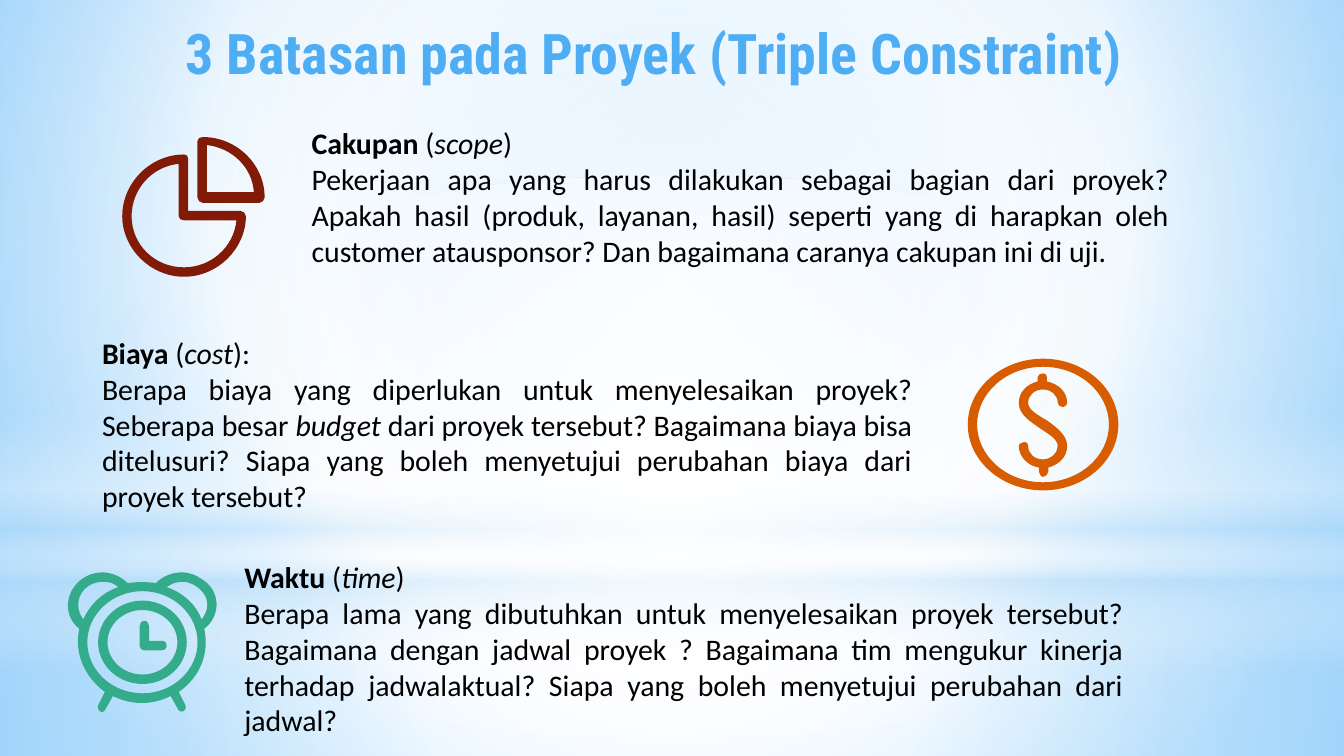
from lxml.etree import SubElement
from pptx import Presentation
from pptx.dml.color import RGBColor
from pptx.enum.shapes import MSO_SHAPE
from pptx.enum.text import MSO_ANCHOR, MSO_AUTO_SIZE, PP_ALIGN
from pptx.oxml.ns import qn
from pptx.util import Cm, Pt

SKY, WHITE, AZURE = RGBColor(0x9E, 0xD5, 0xFF), RGBColor(255, 255, 255), RGBColor(0x5B, 0xB9, 0xFF)
MIST = RGBColor(0xB4, 0xDC, 0xFA)
TITLE_BLUE, BLACK = RGBColor(0x4F, 0xAD, 0xF3), RGBColor(0, 0, 0)
MAROON, ORANGE, GREEN = RGBColor(0x82, 0x1A, 0x08), RGBColor(0xD8, 0x5C, 0x00), RGBColor(0x34, 0xAC, 0x8B)

CENTRE = (50, 50, 50, 50)
ARGUMENTS = {"M": 2, "L": 2, "C": 6, "O": 4, "Z": 0}
ROUNDNESS = 0.55

PIE = (
    "M 42 20 L 42 59 C 42 61 44 62 46 62 L 85 62 C 83 82 66 97 46 97 C 24 97 7 80 7 59 "
    "C 7 39 22 22 42 20 Z M 46 13 C 21 13 0 34 0 59 C 0 83 21 104 46 104 C 71 104 92 83 92 59 "
    "C 92 57 90 55 88 55 L 49 55 L 49 16 C 49 14 48 13 46 13 Z",
    "M 63 6 C 82 8 97 23 98 41 L 63 41 Z M 60 0 C 58 0 56 1 56 3 L 56 45 C 56 47 58 49 60 49 "
    "L 102 49 C 104 49 106 47 106 45 C 106 20 85 0 60 0 Z",
)
COIN = (
    "M 56 11 C 54 11 52 12 52 14 L 52 17 C 44 19 38 25 38 33 C 38 42 47 47 54 52 "
    "C 60 56 67 60 67 65 C 67 70 62 75 56 75 C 50 75 45 71 45 65 C 45 63 44 62 42 62 "
    "C 40 62 38 64 38 65 C 38 73 45 80 53 81 L 53 84 C 53 86 55 88 56 88 C 58 88 60 86 60 84 "
    "L 60 81 C 68 79 74 73 74 65 C 74 57 66 51 59 46 C 52 42 45 38 45 33 C 45 27 50 23 56 23 "
    "C 62 23 67 27 67 33 C 67 35 69 36 71 36 C 73 36 74 34 74 33 C 74 25 68 19 59 17 "
    "L 59 14 C 59 12 58 11 56 11 Z",
    "O 56 49 49 43 O 56 49 56 49",
)
CLOCK = (
    "O 58 52 26 24 O 58 52 33 31",
    "M 29 7 C 33 7 37 8 40 11 C 28 15 19 24 14 35 C 8 27 9 16 18 10 C 21 8 25 7 29 7 Z "
    "M 88 7 C 93 7 99 10 103 15 C 108 21 107 29 102 35 C 98 24 88 15 76 11 C 80 8 84 7 88 7 Z "
    "O 58 52 41 38 "
    "M 28 0 C 20 0 12 4 7 11 C 0 21 1 34 11 42 C 7 60 15 78 30 89 L 25 99 C 24 101 26 104 28 104 "
    "C 29 104 30 103 31 101 L 36 92 C 50 99 65 99 79 92 L 84 101 C 85 104 88 104 89 103 "
    "C 90 102 91 100 90 99 L 85 89 C 101 78 108 60 104 42 C 117 32 116 13 102 5 "
    "C 98 2 93 0 87 0 C 80 0 73 3 68 8 C 61 7 54 7 47 8 C 42 3 35 0 28 0 Z",
    "M 60 36 C 57 36 56 38 56 40 L 56 55 C 56 56 57 58 60 58 L 72 58 C 75 58 76 56 76 55 "
    "C 76 52 75 51 72 51 L 63 51 L 63 40 C 63 38 61 36 60 36 Z",
)
GRID_UNIT = Cm(0.0254)

CONSTRAINTS = [
    ((5.64, 2.24, 16.71, 3.68), (-3.33, 0.35), PIE, MAROON, ("Cakupan ", "scope", ")"), [
        ("Pekerjaan apa yang harus dilakukan sebagai bagian dari proyek? Apakah hasil (produk, "
         "layanan, hasil) seperti yang di harapkan oleh customer atausponsor? Dan bagaimana "
         "caranya cakupan ini di uji.", False, False)]),
    ((4.37, 10.44, 17.12, 3.68), (-3.15, 0.38), CLOCK, GREEN, ("Waktu ", "time", ")"), [
        ("Berapa lama yang dibutuhkan untuk menyelesaikan proyek tersebut? Bagaimana dengan "
         "jadwal proyek ? Bagaimana tim mengukur kinerja terhadap jadwalaktual? Siapa yang boleh "
         "menyetujui perubahan dari jadwal?", False, False)]),
    ((1.68, 6.2, 15.82, 3.68), (16.61, 0.58), COIN, ORANGE, ("Biaya ", "cost", "):"), [
        ("Berapa biaya yang diperlukan untuk menyelesaikan proyek? Seberapa besar ", False, False),
        ("budget ", False, True),
        ("dari proyek tersebut? Bagaimana biaya bisa ditelusuri? Siapa yang boleh menyetujui "
         "perubahan biaya dari proyek tersebut?", False, False)]),
]


def set_gradient(fill, holder, stops, focus=None):
    """Fill with (position, colour, opacity) stops, circular around focus or else downwards."""
    fill.solid()
    solid = holder.find(qn("a:solidFill"))
    gradient = solid.makeelement(qn("a:gradFill"), {"rotWithShape": "1"})
    stop_list = SubElement(gradient, qn("a:gsLst"))
    for position, colour, opacity in stops:
        stop = SubElement(stop_list, qn("a:gs"), pos=str(position * 1000))
        tint = SubElement(stop, qn("a:srgbClr"), val=str(colour))
        if opacity < 100:
            SubElement(tint, qn("a:alpha"), val=str(opacity * 1000))
    if focus:
        circle = SubElement(gradient, qn("a:path"), path="circle")
        SubElement(circle, qn("a:fillToRect"), {side: str(share * 1000) for side, share in zip("ltrb", focus)})
    else:
        SubElement(gradient, qn("a:lin"), ang="5400000", scaled="0")
    holder.replace(solid, gradient)


def add_backdrop(slide, width):
    """Paint the background and its translucent bands of light across the width."""
    set_gradient(slide.background.fill, slide.element.cSld.bg.bgPr,
                 [(0, SKY, 100), (60, WHITE, 100), (100, AZURE, 100)], (20, 10, 20, 60))
    bands = [
        (MSO_SHAPE.RECTANGLE, 10.64, 3.65, [(0, WHITE, 91), (37, WHITE, 76), (100, MIST, 79)], CENTRE),
        (MSO_SHAPE.RECTANGLE, 0, 10.64, [(0, WHITE, 89), (48, WHITE, 62), (100, MIST, 79)], CENTRE),
        (MSO_SHAPE.RECTANGLE, 7.85, 4.78, [(0, WHITE, 0), (29, WHITE, 30), (45, MIST, 40),
                                           (55, WHITE, 26), (65, MIST, 60), (100, WHITE, 0)], None),
        (MSO_SHAPE.OVAL, 3.33, 10.64, [(0, WHITE, 100), (56, WHITE, 0)], CENTRE),
    ]
    for preset, top, height, stops, focus in bands:
        band = slide.shapes.add_shape(preset, 0, Cm(top), width, Cm(height))
        band.shadow.inherit = False
        band.line.fill.background()
        set_gradient(band.fill, band.element.spPr, stops, focus)


def add_title(slide, box):
    """Place the title placeholder in the box, in front of the backdrop."""
    title = slide.shapes.title
    slide.shapes.element.append(title.element)
    title.left, title.top, title.width, title.height = map(Cm, box)
    frame = title.text_frame
    frame.text = "3 Batasan pada Proyek (Triple Constraint)"
    frame.auto_size = MSO_AUTO_SIZE.NONE
    frame.vertical_anchor = MSO_ANCHOR.MIDDLE
    frame.paragraphs[0].alignment = PP_ALIGN.CENTER
    font = frame.paragraphs[0].runs[0].font
    font.name, font.size, font.bold = "Roboto Condensed", Pt(30), True
    font.color.rgb = TITLE_BLUE


def trace(outline):
    """Return the contours of an M, L, C, O and Z outline and where its curves start."""
    tokens = iter(outline.split())
    contours, curve_starts, segments = [], [], 0
    for command in tokens:
        values = [int(next(tokens)) for _ in range(ARGUMENTS[command])]
        points = list(zip(values[::2], values[1::2]))
        if command == "O":
            x, y, rx, ry = values
            contours.append([(x + rx, y)])
            points = [(x + rx * across, y + ry * down)
                      for a, b in ((1, 0), (0, 1), (-1, 0), (0, -1))
                      for across, down in ((a - ROUNDNESS * b, b + ROUNDNESS * a),
                                           (ROUNDNESS * a - b, ROUNDNESS * b + a), (-b, a))]
        if command == "M":
            contours.append(points)
            continue
        if command in "CO":
            curve_starts += range(segments, segments + len(points), 3)
        if points:
            contours[-1] += points
            segments += len(points)
    return contours, curve_starts


def add_icon(slide, left, top, outlines, colour):
    """Draw the outlines of one icon from its top left corner and group them."""
    parts = []
    for outline in outlines:
        contours, curve_starts = trace(outline)
        scaled = [[(x * GRID_UNIT, y * GRID_UNIT) for x, y in contour] for contour in contours]
        builder = slide.shapes.build_freeform(*scaled[0][0])
        for index, (start, *others) in enumerate(scaled):
            if index:
                builder.move_to(*start)
            builder.add_line_segments(others, close=True)
        part = builder.convert_to_shape(left, top)
        segments = list(part.element.iter(qn("a:lnTo")))
        for start in curve_starts:
            curve = segments[start]
            curve.tag = qn("a:cubicBezTo")
            for extra in segments[start + 1:start + 3]:
                curve.append(extra[0])
                extra.getparent().remove(extra)
        part.shadow.inherit = False
        part.fill.solid()
        part.fill.fore_color.rgb = colour
        part.line.fill.background()
        parts.append(part)
    slide.shapes.add_group_shape(parts)


def add_constraint(slide, box, icon_offset, icon, colour, heading, details):
    """Place one constraint's text in the box and its icon at an offset from it."""
    left, top, width, height = map(Cm, box)
    frame = slide.shapes.add_textbox(left, top, width, height).text_frame
    frame.word_wrap = True
    frame.auto_size = MSO_AUTO_SIZE.SHAPE_TO_FIT_TEXT
    name, term, ending = heading
    heading_runs = [(name, True, False), ("(", False, False), (term, False, True), (ending, False, False)]
    explanation = frame.add_paragraph()
    explanation.alignment = PP_ALIGN.JUSTIFY
    for paragraph, pieces in ((frame.paragraphs[0], heading_runs), (explanation, details)):
        for wording, bold, italic in pieces:
            run = paragraph.add_run()
            run.text = wording
            run.font.name, run.font.size = "Calibri", Pt(16)
            run.font.bold, run.font.italic = bold, italic
            run.font.color.rgb = BLACK
    offset_x, offset_y = map(Cm, icon_offset)
    add_icon(slide, left + offset_x, top + offset_y, icon, colour)


presentation = Presentation()
presentation.slide_width, presentation.slide_height = Cm(25.4), Cm(14.29)
slide = presentation.slides.add_slide(presentation.slide_layouts[5])
add_backdrop(slide, presentation.slide_width)
add_title(slide, (1.12, 0.18, 22.48, 1.6))
for constraint in CONSTRAINTS:
    add_constraint(slide, *constraint)
presentation.save("out.pptx")
